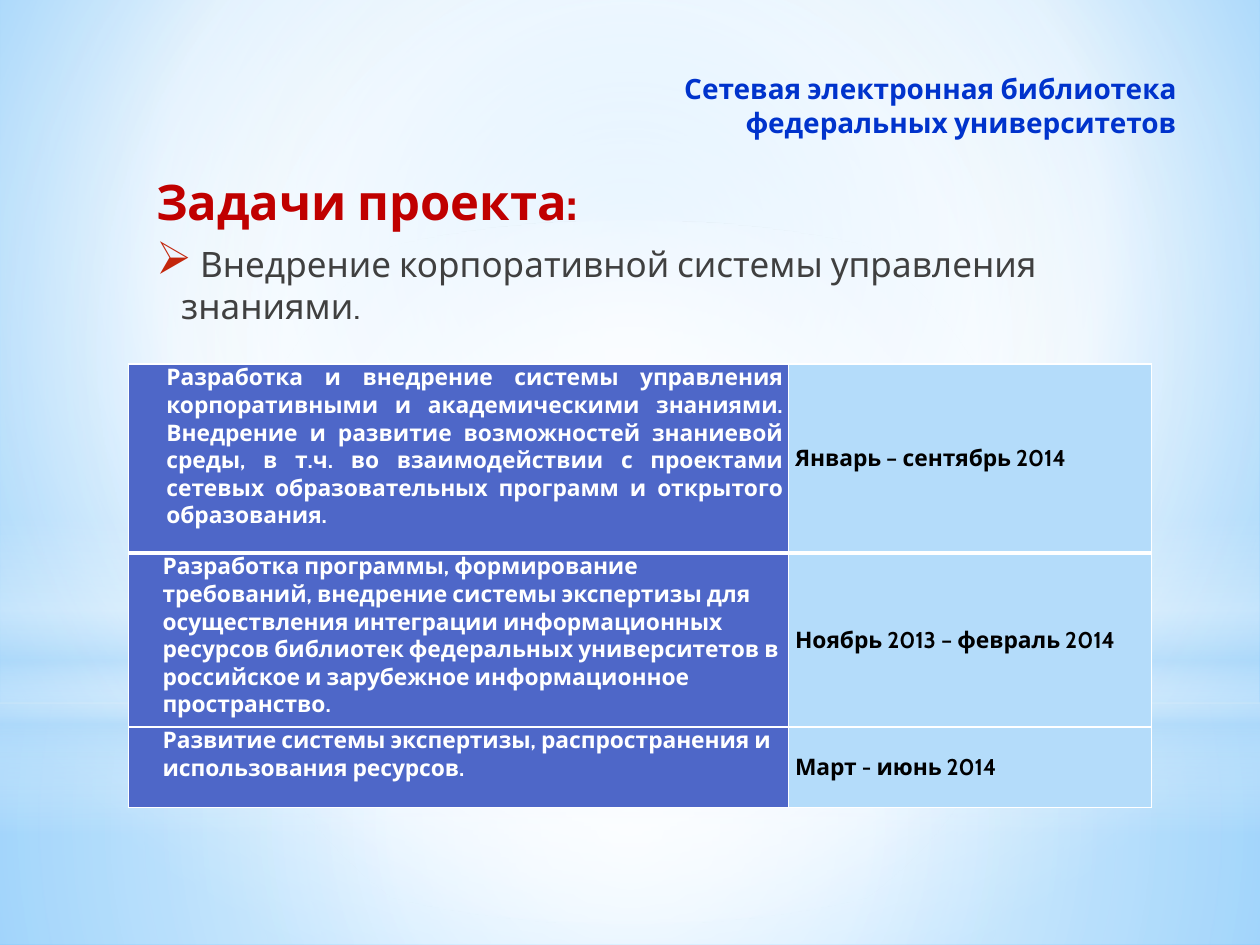
from lxml.etree import SubElement
from pptx import Presentation
from pptx.dml.color import RGBColor
from pptx.enum.shapes import MSO_SHAPE as Shape
from pptx.enum.text import MSO_ANCHOR as Anchor, PP_ALIGN as Align
from pptx.oxml.ns import qn
from pptx.util import Inches, Pt

FONT = "Cabin"
WHITE = RGBColor(0xFF, 0xFF, 0xFF)
BLACK = RGBColor(0x00, 0x00, 0x00)
GREY = RGBColor(0x40, 0x40, 0x40)
RED = RGBColor(0xC0, 0x00, 0x00)
BULLET_RED = RGBColor(0xC3, 0x26, 0x0C)
TITLE_BLUE = RGBColor(0x00, 0x33, 0xCC)
TASK_BLUE = RGBColor(0x4E, 0x67, 0xC8)
PALE_BLUE = RGBColor(0xB4, 0xDC, 0xFA)
SKY_BLUE = RGBColor(0x9E, 0xD5, 0xFF)
DEEP_BLUE = RGBColor(0x5B, 0xB9, 0xFF)

deck = Presentation()
deck.slide_width, deck.slide_height = Inches(10), Inches(7.5)
slide = deck.slides.add_slide(deck.slide_layouts[5])
shapes = slide.shapes


def share(left, top, width, height):
    """Turn percentages of the slide's size into lengths."""
    w, h = deck.slide_width, deck.slide_height
    return [int(part * whole / 100)
            for part, whole in zip((left, top, width, height), (w, h, w, h))]


def set_gradient(element, stops, focus=None):
    """Swap the first solid fill for a gradient: round a focus, else top-down."""
    solid = element.find(".//" + qn("a:solidFill"))
    gradient = solid.makeelement(qn("a:gradFill"), {"rotWithShape": "1"})
    solid.getparent().replace(solid, gradient)
    stop_list = SubElement(gradient, qn("a:gsLst"))
    for position, color, opacity in stops:
        stop = SubElement(stop_list, qn("a:gs"), pos=str(position * 1000))
        rgb = SubElement(stop, qn("a:srgbClr"), val=str(color))
        if opacity < 100:
            SubElement(rgb, qn("a:alpha"), val=str(opacity * 1000))
    if focus:
        path = SubElement(gradient, qn("a:path"), path="circle")
        SubElement(path, qn("a:fillToRect"),
                   {side: str(inset * 1000) for side, inset in zip("ltrb", focus)})
    else:
        SubElement(gradient, qn("a:lin"), ang="5400000", scaled="0")


# Background and its soft light layers
slide.background.fill.solid()
slide.background.fill.fore_color.rgb = WHITE
set_gradient(slide.element,
             [(0, SKY_BLUE, 100), (60, WHITE, 100), (100, DEEP_BLUE, 100)],
             (20, 10, 20, 60))

CENTER = (50, 50, 50, 50)
light_layers = [
    (Shape.RECTANGLE, (0, 74.4, 100, 25.6), CENTER,
     [(0, WHITE, 91), (37, WHITE, 76), (100, PALE_BLUE, 79)]),
    (Shape.RECTANGLE, (0, 0, 100, 74.4), CENTER,
     [(0, WHITE, 89), (48, WHITE, 62), (100, PALE_BLUE, 79)]),
    (Shape.RECTANGLE, (0, 54.93, 100, 33.33), None,
     [(0, WHITE, 0), (29, WHITE, 30), (45, PALE_BLUE, 40),
      (55, WHITE, 26), (65, PALE_BLUE, 60), (100, WHITE, 0)]),
    (Shape.OVAL, (0, 23.33, 100, 74.4), CENTER,
     [(0, WHITE, 100), (56, WHITE, 0)]),
]
for outline, place, focus, stops in light_layers:
    layer = shapes.add_shape(outline, *share(*place))
    layer.shadow.inherit = False
    layer.line.fill.background()
    layer.fill.solid()
    layer.fill.fore_color.rgb = WHITE
    set_gradient(layer.element, stops, focus)

# Title, brought in front of the light layers
title = shapes.title
title.element.getparent().append(title.element)
title.left, title.top, title.width, title.height = share(23.2, 6.93, 71.2, 9.47)
title.text_frame.vertical_anchor = Anchor.TOP
title.text_frame.word_wrap = True
heading = title.text_frame.paragraphs[0]
heading.text = "Сетевая электронная библиотека\nфедеральных университетов"
heading.alignment = Align.RIGHT
heading.font.name, heading.font.size, heading.font.bold = FONT, Pt(16), True
heading.font.color.rgb = TITLE_BLUE

# Project goals
goals = shapes.add_textbox(*share(10.9, 17.47, 79.7, 70.4)).text_frame
goals.word_wrap = True
goal_lines = [
    ("Задачи проекта:", 28, True, RED, 0.05, 0),
    (" Внедрение корпоративной системы управления знаниями.", 20, False, GREY, 0.25, -0.2),
]
for index, (words, size, bold, color, margin, indent) in enumerate(goal_lines):
    line = goals.add_paragraph() if index else goals.paragraphs[0]
    line.text = words
    line.font.name, line.font.size, line.font.bold = FONT, Pt(size), bold
    line.font.color.rgb = color
    line.space_before, line.space_after = Pt(size * 0.2), Pt(3)
    properties = line._p.get_or_add_pPr()
    properties.set("marL", str(Inches(margin)))
    properties.set("indent", str(Inches(indent)))

bullet_color = properties.makeelement(qn("a:buClr"), {})
SubElement(bullet_color, qn("a:srgbClr"), val=str(BULLET_RED))
bullet_size = properties.makeelement(qn("a:buSzPct"), {"val": "130000"})
bullet = properties.makeelement(qn("a:buChar"), {"char": "➢"})
spacing_end = properties.index(properties.find(qn("a:spcAft"))) + 1
properties[spacing_end:spacing_end] = [bullet_color, bullet_size, bullet]

# Schedule: task, dates, left indent, alignment, row height
schedule = [
    ("Разработка и внедрение системы управления корпоративными и академическими "
     "знаниями. Внедрение и развитие возможностей знаниевой среды, в т.ч. во "
     "взаимодействии с проектами сетевых образовательных программ и открытого "
     "образования.",
     "Январь – сентябрь 2014", 0.25, Align.JUSTIFY, 1.5),
    ("Разработка программы, формирование требований, внедрение системы экспертизы "
     "для осуществления интеграции информационных ресурсов библиотек федеральных "
     "университетов в российское и зарубежное информационное пространство.",
     "Ноябрь 2013 – февраль 2014", 0.22, Align.LEFT, 1.38),
    ("Развитие системы экспертизы, распространения и использования ресурсов.",
     "Март - июнь 2014", 0.22, Align.LEFT, 0.64),
]
table = shapes.add_table(len(schedule), 2, *share(10.2, 38.53, 81.2, 46.93)).table
table.first_row = table.horz_banding = False
table.columns[0].width, table.columns[1].width = Inches(5.24), Inches(2.88)

for row, (task, dates, indent, alignment, height) in enumerate(schedule):
    table.rows[row].height = Inches(height)
    columns = [
        (task, WHITE, TASK_BLUE, Anchor.TOP, alignment, indent),
        (dates, BLACK, PALE_BLUE, Anchor.MIDDLE, Align.LEFT, 0),
    ]
    for column, (words, color, fill, anchor, align, margin) in enumerate(columns):
        cell = table.cell(row, column)
        cell.margin_left = cell.margin_right = Inches(0.05)
        cell.margin_top = cell.margin_bottom = 0
        cell.vertical_anchor = anchor
        for side in "LRTB":
            thick = (row, side) in ((0, "B"), (1, "T"))
            border = SubElement(cell._tc.get_or_add_tcPr(), qn("a:ln" + side),
                                w=str(Pt(3 if thick else 1)))
            SubElement(SubElement(border, qn("a:solidFill")),
                       qn("a:srgbClr"), val=str(WHITE))
        cell.fill.solid()
        cell.fill.fore_color.rgb = fill
        entry = cell.text_frame.paragraphs[0]
        entry.text = words
        entry.alignment = align
        entry.font.name, entry.font.size, entry.font.bold = FONT, Pt(13), True
        entry.font.color.rgb = color
        entry._p.get_or_add_pPr().set("marL", str(Inches(margin)))

deck.save("out.pptx")
